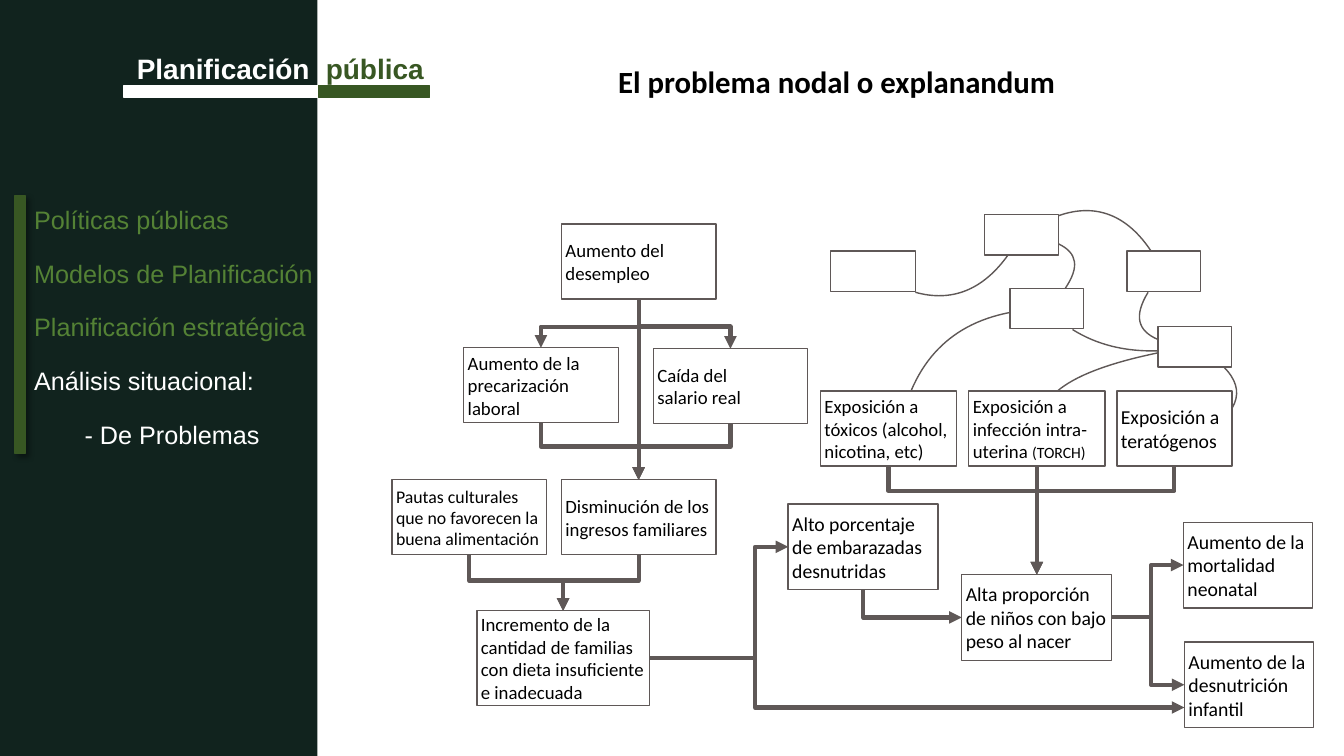
from lxml import etree
from pptx import Presentation
from pptx.dml.color import RGBColor
from pptx.enum.shapes import MSO_CONNECTOR, MSO_SHAPE
from pptx.enum.text import MSO_ANCHOR, PP_ALIGN
from pptx.oxml.ns import qn
from pptx.util import Pt

RECT, STRAIGHT = MSO_SHAPE.RECTANGLE, MSO_CONNECTOR.STRAIGHT
MIDDLE, TOP = MSO_ANCHOR.MIDDLE, MSO_ANCHOR.TOP
LEFT, CENTER = PP_ALIGN.LEFT, PP_ALIGN.CENTER

# Content
TITLE = "El problema nodal o explanandum"
BRAND = ("Planificación", "\tpública")
MENU = ["Políticas públicas", "Modelos de Planificación", "Planificación estratégica",
        "Análisis situacional:", "\t- De Problemas"]
MENU_DONE = 3  # entries already covered

# Box sizes: width, height
WIDE, EXPOSURE, SHORT = (110.4, 53.5), (97.2, 53.5), (82.2, 53.5)
OUTCOME, EFFECT, FAMILY = (107.2, 61.2), (92.2, 61.2), (123.2, 67.7)
SMALL, SMALL_WIDE = (52.6, 28.8), (60.5, 28.8)

# name: (left, top), size, text style, text runs
CAUSES = {
    "desempleo": ((401, 160), WIDE, "box", ["Aumento del desempleo"]),
    "precarización": ((331.2, 248.4), WIDE, "box", ["Aumento de la precarización laboral"]),
    "salario": ((466.6, 249.1), WIDE, "box", ["Caída del\vsalario real"]),
    "pautas": ((280, 342.7), WIDE, "box_small",
               ["Pautas culturales que no favorecen la buena alimentación"]),
    "ingresos": ((401, 342.7), WIDE, "box", ["Disminución de los ingresos familiares"]),
    "familias": ((340.6, 436.3), FAMILY, "box",
                 ["Incremento de la cantidad de familias con dieta insuficiente e inadecuada"]),
    "embarazadas": ((563, 360), OUTCOME, "box_large",
                    ["Alto porcentaje de embarazadas desnutridas"]),
    "bajo peso": ((687, 410.4), OUTCOME, "box_large",
                  ["Alta proporción de niños con bajo peso al nacer"]),
    "mortalidad": ((845.3, 373), EFFECT, "box_large", ["Aumento de la mortalidad neonatal"]),
    "desnutrición": ((846, 458.6), EFFECT, "box_large", ["Aumento de la desnutrición infantil"]),
    "tóxicos": ((586, 279.4), EXPOSURE, "box", ["Exposición a tóxicos (alcohol, nicotina, etc)"]),
    "infección": ((692, 279.4), EXPOSURE, "box",
                  ["Exposición a infección intra-uterina ", "(TORCH)"]),
    "teratógenos": ((797.8, 279.4), SHORT, "box_large", ["Exposición a teratógenos"]),
}
EMPTY_BOXES = [((703.4, 153.4), SMALL), ((805, 179.3), SMALL), ((593.3, 179.3), SMALL_WIDE),
               ((721.4, 205.9), SMALL), ((827.3, 233.3), SMALL)]
# Start, two control points, end
CURVES = [
    [(874.1, 262.1), (891.4, 279.4), (884.2, 296.6), (853.9, 313.2)],
    [(827.3, 242.6), (812.2, 236.2), (810, 225.4), (820.1, 208.8)],
    [(827.3, 250.6), (803.5, 251.3), (783.4, 246.2), (766.1, 235.4)],
    [(641.5, 313.2), (649.4, 262.1), (676.1, 231.8), (721.4, 223.2)],
    [(720, 182.2), (702, 207.4), (679.7, 216), (653.8, 208.8)],
    [(756, 154.1), (782.6, 144.7), (805, 153.4), (822.2, 179.3)],
    [(756, 174.2), (769.7, 180.7), (771.1, 190.8), (761, 205.9)],
    [(827.3, 252), (761, 265.7), (734.4, 285.8), (747.4, 313.2)],
]
# Causes, effect, height of the shared horizontal run
DOWN_ROUTES = [
    (["desempleo"], "precarización", 233.3), (["desempleo"], "salario", 233.3),
    (["precarización", "salario"], "ingresos", 319),
    (["pautas", "ingresos"], "familias", 414.7),
    (["tóxicos", "teratógenos"], "bajo peso", 350.6),
]
# Cause, effect, x of the vertical run, shift of the arrow tip
ACROSS_ROUTES = [("bajo peso", "mortalidad", 822.2, 0), ("bajo peso", "desnutrición", 822.2, 0),
                 ("familias", "embarazadas", 539.3, 0), ("familias", "desnutrición", 539.3, 16.2)]
STRAIGHT_ROUTES = [("desempleo", "ingresos"), ("infección", "bajo peso")]

THEME = {
    "line": "5F5857", "paper": "FFFFFF", "ink": "000000", "panel": "11231E",
    "green": "385723", "menu": "548235", "body": "Calibri", "side": "Arial",
    "title": 22, "brand": 20, "entry": 18,
    "box": 13.4, "box_large": 14.1, "box_small": 12.7, "note": 11.2,
    "thin": 1, "thick": 3,
}

deck = Presentation()
deck.slide_width, deck.slide_height = Pt(960), Pt(540)
page = deck.slides.add_slide(deck.slide_layouts[6])


def color(name):
    return RGBColor.from_string(THEME[name])


def format_span(span, size, ink, face="body", bold=False):
    span.font.size, span.font.name, span.font.bold = Pt(THEME[size]), THEME[face], bold
    span.font.color.rgb = color(ink)


def style_line(shape, width, arrow=False):
    shape.line.color.rgb = color("line")
    shape.line.width = Pt(THEME[width])
    if arrow:
        etree.SubElement(shape.line._get_or_add_ln(), qn("a:tailEnd"), type="triangle")


def add_rect(left, top, width, height, fill, line=None):
    box = page.shapes.add_shape(RECT, Pt(left), Pt(top), Pt(width), Pt(height))
    box.shadow.inherit = False
    box.fill.solid()
    box.fill.fore_color.rgb = color(fill)
    if line:
        box.line.color.rgb = color(line)
        box.line.width = Pt(THEME["thin"])
    else:
        box.line.fill.background()
    return box


def add_text(left, top, width, height):
    frame = page.shapes.add_textbox(Pt(left), Pt(top), Pt(width), Pt(height)).text_frame
    frame.word_wrap, frame.vertical_anchor = True, TOP
    return frame


def add_path(points, width, arrow=False):
    corners = [(Pt(x), Pt(y)) for x, y in points]
    builder = page.shapes.build_freeform(*corners[0], scale=1.0)
    builder.add_line_segments(corners[1:], close=False)
    shape = builder.convert_to_shape()
    shape.shadow.inherit = False
    shape.fill.background()
    style_line(shape, width, arrow)
    return shape


def add_curve(points):
    shape = add_path(points, "thin")
    segments = list(shape._element.iter(qn("a:lnTo")))
    curve = etree.Element(qn("a:cubicBezTo"))
    segments[0].addprevious(curve)
    for segment in segments:
        curve.append(segment[0])
        segment.getparent().remove(segment)


def side(name, across, down):
    """Point on a box, as fractions of its width and height."""
    (left, top), (width, height) = CAUSES[name][:2]
    return left + across * width, top + down * height


# Web of unnamed causes
for place, size in EMPTY_BOXES:
    add_rect(*place, *size, "paper", "line")
for points in CURVES:
    add_curve(points)

# Named causes and effects
boxes = {}
for name, (place, size, style, texts) in CAUSES.items():
    box = boxes[name] = add_rect(*place, *size, "paper", "line")
    frame = box.text_frame
    frame.word_wrap, frame.vertical_anchor = True, MIDDLE
    frame.margin_left = frame.margin_right = frame.margin_top = frame.margin_bottom = Pt(2.9)
    frame.text = texts[0]
    para = frame.paragraphs[0]
    para.alignment = LEFT
    for span in para.runs:
        format_span(span, style, "ink")
    for note in texts[1:]:
        span = para.add_run()
        span.text = note
        format_span(span, "note", "ink")

# Arrows
for causes, effect, run_y in DOWN_ROUTES:
    for cause in causes:
        start, end = side(cause, 0.5, 1), side(effect, 0.5, 0)
        add_path([start, (start[0], run_y), (end[0], run_y), end], "thick", True)
for cause, effect, run_x, shift in ACROSS_ROUTES:
    start, (end_x, end_y) = side(cause, 1, 0.5), side(effect, 0, 0.5)
    end_y += shift
    add_path([start, (run_x, start[1]), (run_x, end_y), (end_x, end_y)], "thick", True)
start, end = side("embarazadas", 0.5, 1), side("bajo peso", 0, 0.5)
add_path([start, (start[0], end[1]), end], "thick", True)
for cause, effect in STRAIGHT_ROUTES:
    arrow = page.shapes.add_connector(STRAIGHT, 0, 0, 0, 0)
    arrow.begin_connect(boxes[cause], 2)
    arrow.end_connect(boxes[effect], 0)
    style_line(arrow, "thick", True)
    etree.SubElement(arrow._element.spPr, qn("a:effectLst"))

# Title
frame = add_text(293.8, 41, 607.7, 33.8)
frame.text = TITLE
frame.paragraphs[0].alignment = CENTER
format_span(frame.paragraphs[0].runs[0], "title", "ink", bold=True)

# Side panel and its bar with shadow
add_rect(0, 0, 226.8, 540, "panel")
bar = add_rect(10.8, 139.7, 7.2, 184.3, "green", "green")
effects = bar._element.spPr.find(qn("a:effectLst"))
shadow = etree.SubElement(effects, qn("a:outerShdw"), blurRad=str(Pt(4)), dist=str(Pt(3)),
                          dir="2700000", algn="tl", rotWithShape="0")
shade = etree.SubElement(shadow, qn("a:srgbClr"), val=THEME["ink"])
etree.SubElement(shade, qn("a:alpha"), val="40000")

# Brand line
add_rect(88.6, 61.2, 138.9, 8.6, "paper", "paper")
add_rect(227.5, 61.2, 79.2, 8.6, "green", "green")
frame = add_text(74.2, 33.1, 237.6, 31.7)
frame.margin_left = Pt(23.5)
para = frame.paragraphs[0]
for text, ink in zip(BRAND, ("paper", "green")):
    span = para.add_run()
    span.text = text
    format_span(span, "brand", ink, "side", True)
stops = etree.SubElement(para._p.get_or_add_pPr(), qn("a:tabLst"))
etree.SubElement(stops, qn("a:tab"), pos=str(Pt(135)), algn="l")

# Menu
frame = add_text(17.3, 131.5, 243.4, 222.7)
frame.text = "\n".join(MENU)
for index, para in enumerate(frame.paragraphs):
    para.line_spacing, para.space_after = 1.5, Pt(6)
    format_span(para.runs[0], "entry", "menu" if index < MENU_DONE else "paper", "side")

deck.save("out.pptx")
